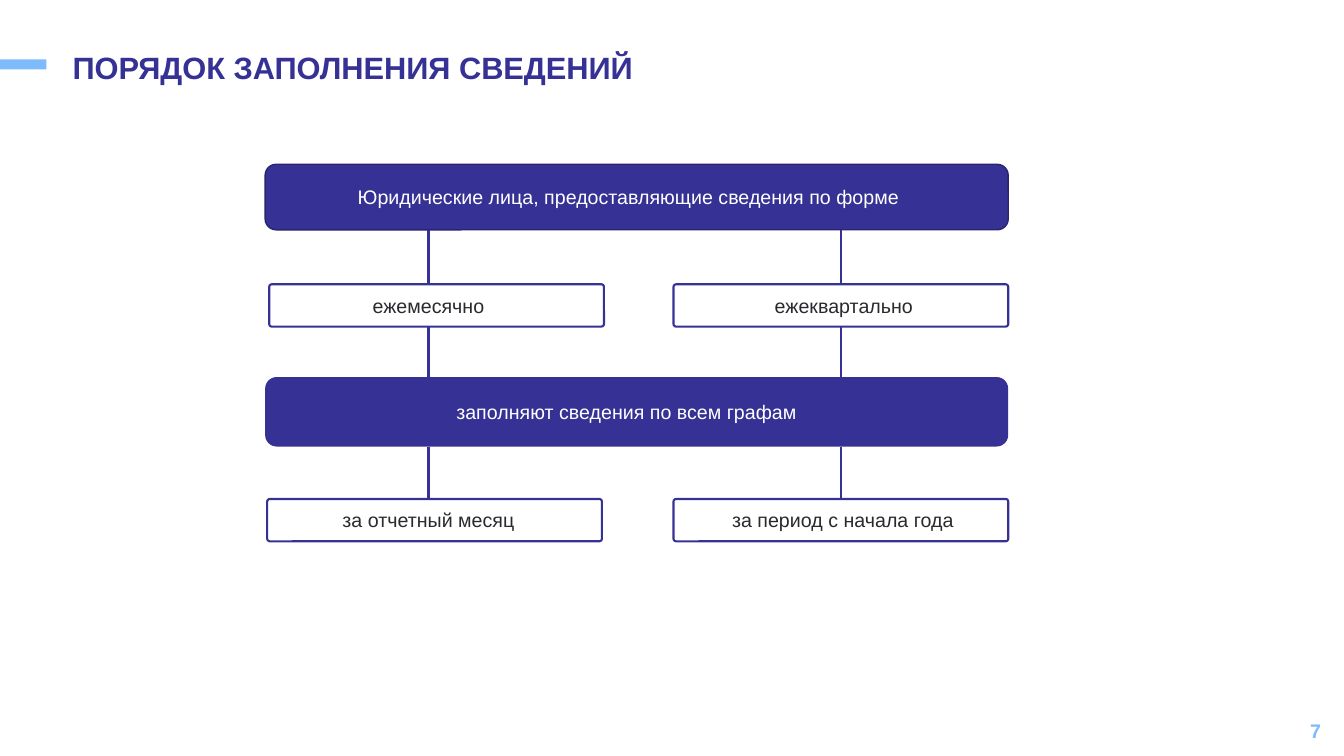
import pptx
import pptx.dml.color
import pptx.enum.shapes
import pptx.enum.text
import pptx.oxml
import pptx.util

Inches = pptx.util.Inches
RGBColor = pptx.dml.color.RGBColor
SHAPE = pptx.enum.shapes.MSO_SHAPE
ALIGN = pptx.enum.text.PP_ALIGN
ANCHOR = pptx.enum.text.MSO_ANCHOR

INDIGO = RGBColor(0x36, 0x31, 0x94)
DARK_INDIGO = RGBColor(0x28, 0x24, 0x6D)
SKY = RGBColor(0x7D, 0xBB, 0xFC)
INK = RGBColor(0x28, 0x2A, 0x2E)
WHITE = RGBColor(0xFF, 0xFF, 0xFF)

TITLE_FONT = {"name": "Arial", "size": pptx.util.Pt(22), "bold": True}
NUMBER_FONT = {"name": "Arial", "size": pptx.util.Pt(14), "bold": True}
LABEL_FONT = {"name": "Arial", "size": pptx.util.Pt(14), "bold": False}


def write(sp, text, font, color, align, anchor):
    tf = sp.text_frame
    tf.word_wrap = True
    tf.auto_size = pptx.enum.text.MSO_AUTO_SIZE.NONE
    tf.vertical_anchor = anchor
    p = tf.paragraphs[0]
    p.alignment = align
    r = p.add_run()
    r.text = text
    for key, value in font.items():
        setattr(r.font, key, value)
    r.font.color.rgb = color
    return p


def add_block(slide, kind, box, fill=None, line=None, width=1.5):
    sp = slide.shapes.add_shape(kind, *map(Inches, box))
    sp.shadow.inherit = False
    if fill is None:
        sp.fill.background()
    else:
        sp.fill.solid()
        sp.fill.fore_color.rgb = fill
    if line is None:
        sp.line.fill.background()
    else:
        sp.line.color.rgb = line
        sp.line.width = pptx.util.Pt(width)
    return sp


def add_label(sp, text, color, shift):
    """Centre the text in the shape, moved sideways by shift inches."""
    tf = sp.text_frame
    tf.margin_left = Inches(max(0, 2 * shift))
    tf.margin_right = Inches(max(0, -2 * shift))
    tf.margin_top = tf.margin_bottom = 0
    write(sp, text, LABEL_FONT, color, ALIGN.CENTER, ANCHOR.MIDDLE)


def add_link(slide, x, top, bottom):
    cn = slide.shapes.add_connector(
        pptx.enum.shapes.MSO_CONNECTOR.STRAIGHT,
        Inches(x), Inches(top), Inches(x), Inches(bottom))
    cn.line.color.rgb = INDIGO
    cn.line.width = pptx.util.Pt(1.5)
    cn._element.spPr.append(pptx.oxml.parse_xml(
        '<a:effectLst xmlns:a="http://schemas.openxmlformats.org/drawingml/2006/main"/>'))
    return cn


def add_header(slide, box):
    left, top, width, height = box
    add_block(slide, SHAPE.RECTANGLE, (0, top + 0.12, 0.46, 0.1), SKY)
    title = slide.shapes.title
    title.left, title.top, title.width, title.height = map(Inches, box)
    p = write(title, "ПОРЯДОК ЗАПОЛНЕНИЯ СВЕДЕНИЙ", TITLE_FONT, INDIGO,
              ALIGN.LEFT, ANCHOR.TOP)
    p.line_spacing = 0.9


def add_page_number(slide, box):
    sp = slide.shapes.add_textbox(*map(Inches, box))
    write(sp, "7", NUMBER_FONT, SKY, ALIGN.RIGHT, ANCHOR.MIDDLE)


def add_banner(slide, box, text, shift, line=None):
    sp = add_block(slide, SHAPE.ROUNDED_RECTANGLE, box, INDIGO, line, 1)
    add_label(sp, text, WHITE, shift)


def add_option(slide, box, text, shift):
    sp = add_block(slide, SHAPE.ROUNDED_RECTANGLE, box, line=INDIGO)
    sp.adjustments[0] = 0.06
    add_label(sp, text, INK, shift)
    return sp


def add_scheme(slide, box):
    """Two banners, each with a pair of options linked below it."""
    left, top, width, height = box
    option_w, option_h = 3.32, 0.42
    second_top = top + 2.11
    option_top, last_top = top + 1.19, top + height - option_h
    left_x, right_x = left + 1.62, left + width - option_w / 2

    add_banner(slide, (left, top, width, 0.65),
               "Юридические лица, предоставляющие сведения по форме",
               -0.08, DARK_INDIGO)
    add_banner(slide, (left, second_top, width, 0.69),
               "заполняют сведения по всем графам", -0.1)

    rows = [
        (option_top, top + 0.65, 0.04,
         ("ежемесячно", -0.08), ("ежеквартально", 0.03)),
        (last_top, second_top + 0.69, 0.02,
         ("за отчетный месяц", -0.06), ("за период с начала года", 0.02)),
    ]
    for row_top, banner_bottom, indent, left_label, right_label in rows:
        add_option(slide, (left + indent, row_top, option_w, option_h), *left_label)
        right = add_option(slide, (left + width - option_w, row_top,
                                   option_w, option_h), *right_label)
        add_link(slide, left_x, banner_bottom, row_top)
        add_link(slide, right_x, banner_bottom, row_top).end_connect(right, 0)
        if row_top == option_top:
            below = row_top + option_h
            add_link(slide, left_x, below, second_top)
            add_link(slide, right_x, below, second_top).begin_connect(right, 2)


def main():
    prs = pptx.Presentation()
    prs.slide_width, prs.slide_height = Inches(13.33), Inches(7.5)
    slide = prs.slides.add_slide(prs.slide_layouts[5])
    add_header(slide, (0.62, 0.47, 9.91, 0.34))
    add_scheme(slide, (2.63, 1.63, 7.37, 3.74))
    add_page_number(slide, (10.2, 7.05, 3, 0.4))
    prs.save("out.pptx")


if __name__ == "__main__":
    main()
